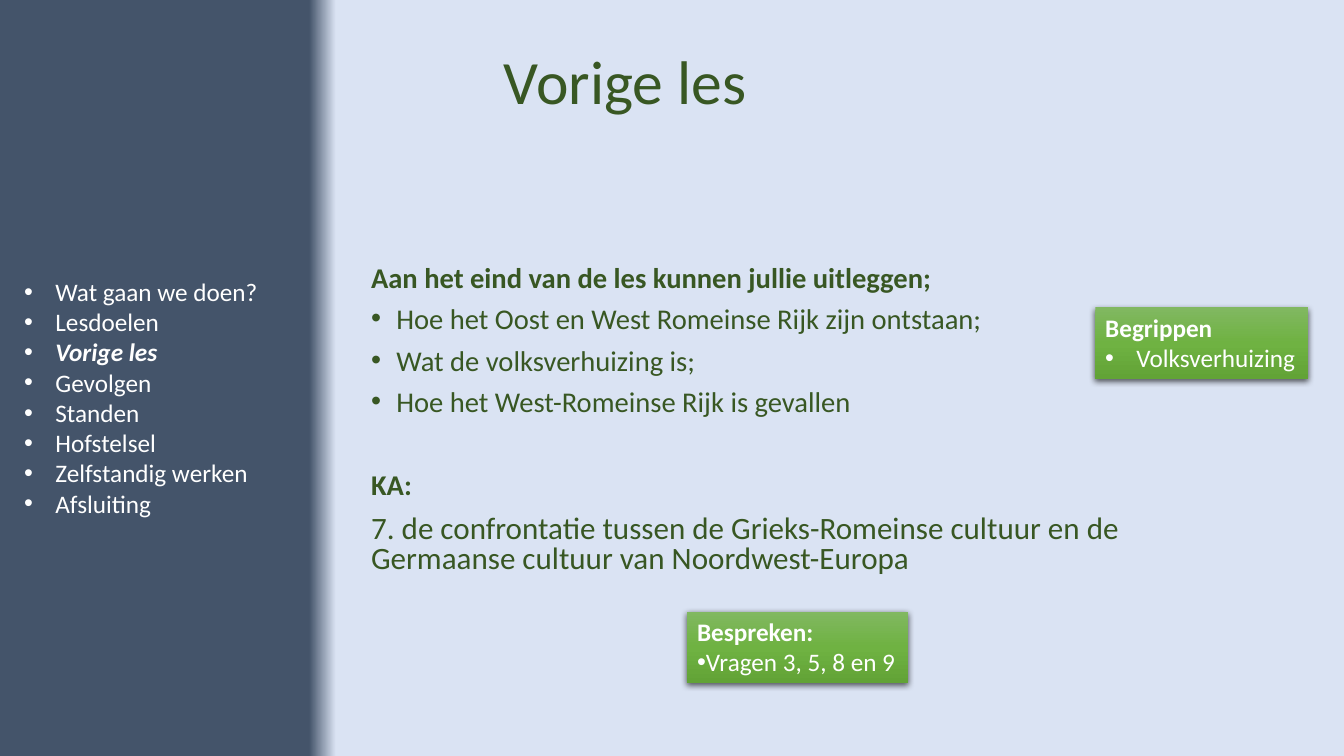
from copy import deepcopy

from lxml.etree import SubElement
from pptx import Presentation
from pptx.dml.color import RGBColor
from pptx.enum.shapes import MSO_SHAPE
from pptx.enum.text import MSO_ANCHOR, MSO_AUTO_SIZE, PP_ALIGN
from pptx.oxml.ns import qn
from pptx.util import Inches, Pt

COLORS = {
    "navy": "44546A",
    "pale": "DAE3F3",
    "text": "385723",
    "white": "FFFFFF",
    "green_top": "81B861",
    "green_middle": "6FB242",
    "green_bottom": "62A336",
    "shadow": "000000",
}

presentation = Presentation()
presentation.slide_width = Inches(13.33)
presentation.slide_height = Inches(7.5)
column = presentation.slide_width / 160
row = presentation.slide_height / 90
slide = presentation.slides.add_slide(presentation.slide_layouts[6])


def write(shape, text, size=18, color="white", bold=False, italic=False,
          bullet=False, indent=0, line_spacing=1.0, space_before=0):
    frame = shape.text_frame
    paragraph = frame.paragraphs[0]
    if paragraph.runs:
        paragraph = frame.add_paragraph()
        paragraph.space_before = Pt(space_before)
    paragraph.alignment = PP_ALIGN.LEFT
    paragraph.line_spacing = line_spacing
    if bullet:
        properties = paragraph._p.get_or_add_pPr()
        properties.set("marL", str(Inches(indent)))
        properties.set("indent", str(-Inches(indent)))
        SubElement(properties, qn("a:buFont"), typeface="Arial")
        SubElement(properties, qn("a:buChar"), char="•")
    run = paragraph.add_run()
    run.text = text
    run.font.name = "Calibri"
    run.font.size = Pt(size)
    run.font.bold = bold
    run.font.italic = italic
    run.font.color.rgb = RGBColor.from_string(COLORS[color])


def paint_gradient(fill, element, angle, stops):
    fill.gradient()
    fill.gradient_angle = angle
    stop_list = next(element.iter(qn("a:gsLst")))
    while len(stop_list) < len(stops):
        stop_list.append(deepcopy(stop_list[0]))
    for stop, (position, color) in zip(fill.gradient_stops, stops):
        stop.position = position
        stop.color.rgb = RGBColor.from_string(COLORS[color])


paint_gradient(slide.background.fill, slide.element, 0,
               [(0.23, "navy"), (0.25, "pale")])

title = slide.shapes.add_textbox(
    int(58.8 * column), int(2 * row), int(92.6 * column), int(16.1 * row))
title.text_frame.word_wrap = True
title.text_frame.vertical_anchor = MSO_ANCHOR.MIDDLE
write(title, "Vorige les", size=44, color="text", line_spacing=0.9)

goals = slide.shapes.add_textbox(
    int(43 * column), int(31.1 * row), int(94.8 * column), int(43.1 * row))
goals.text_frame.word_wrap = True
goal_format = {"size": 20.4, "color": "text", "line_spacing": 0.8, "space_before": 10}
write(goals, "Aan het eind van de les kunnen jullie uitleggen;", bold=True, **goal_format)
for goal in (
    "Hoe het Oost en West Romeinse Rijk zijn ontstaan;",
    "Wat de volksverhuizing is;",
    "Hoe het West-Romeinse Rijk is gevallen",
):
    write(goals, goal, bullet=True, indent=0.25, **goal_format)
write(goals, "KA:", bold=True, **{**goal_format, "space_before": 40})
write(goals,
      "7. de confrontatie tussen de Grieks-Romeinse cultuur en de "
      "Germaanse cultuur van Noordwest-Europa",
      **{**goal_format, "size": 22.2})

for left, top, width, heading, item, indent in (
    (130.4, 36.6, 25.3, "Begrippen", "Volksverhuizing", 0.31),
    (81.8, 72.8, 26.3, "Bespreken:", "Vragen 3, 5, 8 en 9", 0),
):
    card = slide.shapes.add_shape(
        MSO_SHAPE.RECTANGLE,
        int(left * column), int(top * row), int(width * column), int(8.5 * row))
    paint_gradient(card.fill, card.element, 270,
                   [(0, "green_top"), (0.5, "green_middle"), (1, "green_bottom")])
    card.line.fill.background()
    card.shadow.inherit = False
    effects = next(card.element.iter(qn("a:effectLst")))
    shadow = SubElement(effects, qn("a:outerShdw"), blurRad=str(Pt(4.5)),
                        dist=str(Pt(1.5)), dir="5400000", algn="ctr", rotWithShape="0")
    shadow_color = SubElement(shadow, qn("a:srgbClr"), val=COLORS["shadow"])
    SubElement(shadow_color, qn("a:alpha"), val="63000")
    card.text_frame.word_wrap = False
    card.text_frame.auto_size = MSO_AUTO_SIZE.SHAPE_TO_FIT_TEXT
    card.text_frame.vertical_anchor = MSO_ANCHOR.TOP
    write(card, heading, bold=True)
    write(card, item, bullet=True, indent=indent)

agenda = slide.shapes.add_textbox(
    int(1.7 * column), int(32.3 * row), int(30.8 * column), int(30.2 * row))
agenda.text_frame.word_wrap = False
agenda.text_frame.auto_size = MSO_AUTO_SIZE.SHAPE_TO_FIT_TEXT
for topic in (
    "Wat gaan we doen?", "Lesdoelen", "Vorige les", "Gevolgen",
    "Standen", "Hofstelsel", "Zelfstandig werken", "Afsluiting",
):
    current = topic == "Vorige les"
    write(agenda, topic, bold=current, italic=current, bullet=True, indent=0.31)

presentation.save("out.pptx")
